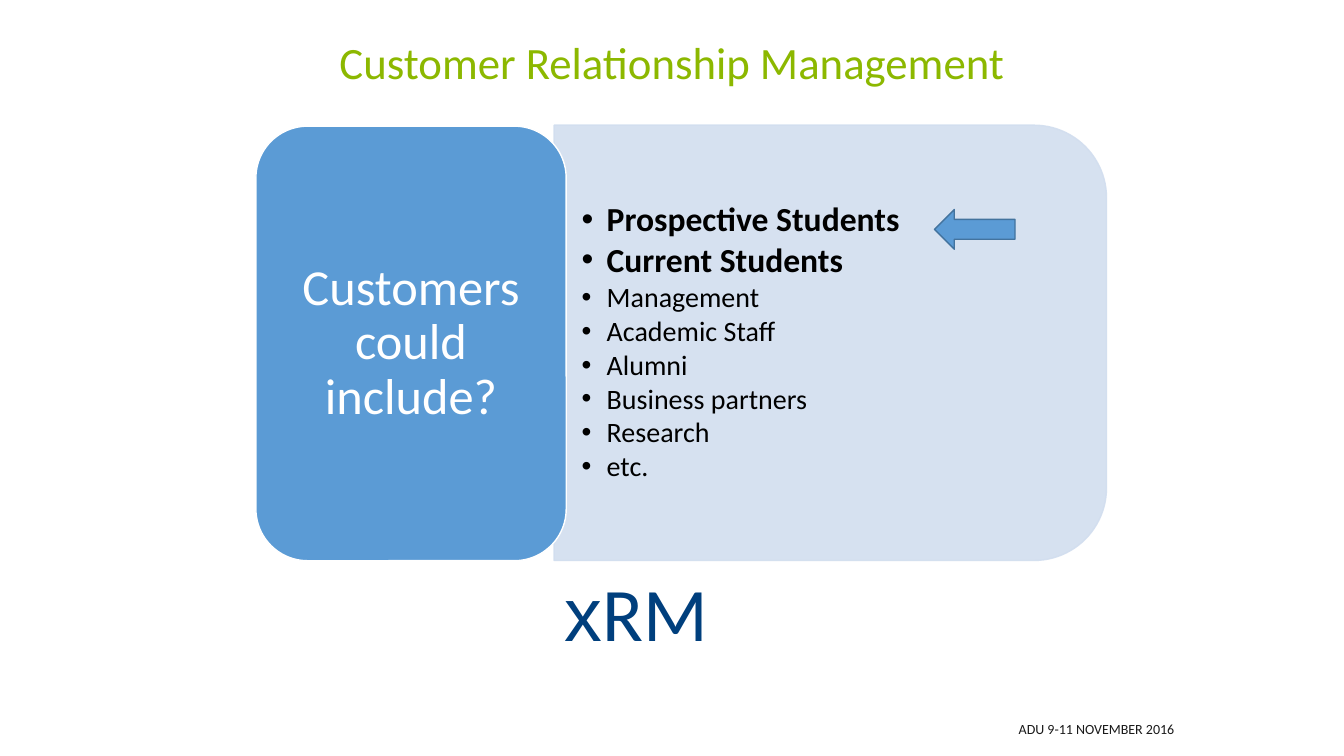
from lxml import etree
from pptx import Presentation
from pptx.dml.color import RGBColor
from pptx.enum.shapes import MSO_SHAPE
from pptx.enum.text import MSO_ANCHOR, PP_ALIGN
from pptx.oxml.ns import qn
from pptx.util import Cm, Pt

LEFT, CENTER, RIGHT = PP_ALIGN.LEFT, PP_ALIGN.CENTER, PP_ALIGN.RIGHT
TOP, MIDDLE = MSO_ANCHOR.TOP, MSO_ANCHOR.MIDDLE
ROUNDED, TOP_ROUNDED = MSO_SHAPE.ROUNDED_RECTANGLE, MSO_SHAPE.ROUND_2_SAME_RECTANGLE
LEFT_ARROW = MSO_SHAPE.LEFT_ARROW
BLUE, PALE_BLUE, WHITE = "5B9BD5", "D2DEEF", "FFFFFF"
KEY_CUSTOMERS = ["Prospective Students", "Current Students"]
OTHER_CUSTOMERS = ["Management", "Academic Staff", "Alumni", "Business partners", "Research", "etc."]


def set_color(color_format, value):
    color_format.rgb = RGBColor.from_string(value)


def set_values(target, values):
    for name, value in values.items():
        setattr(target, name, value)


def add_block(slide, kind, box, fill, line, rotation=0):
    shape = slide.shapes.add_shape(kind, *map(Cm, box))
    shape.shadow.inherit = False
    shape.rotation = rotation
    shape.fill.solid()
    set_color(shape.fill.fore_color, fill)
    set_color(shape.line.color, line)
    shape.line.width = Pt(1)
    return shape


def set_opacity(shape, percent):
    for color in shape.element.spPr.iter(qn("a:srgbClr")):
        etree.SubElement(color, qn("a:alpha"), val=str(percent * 1000))


def add_text_frame(slide, box, anchor=MIDDLE, margins=(0.25, 0.13)):
    frame = slide.shapes.add_textbox(*map(Cm, box)).text_frame
    horizontal, vertical = map(Cm, margins)
    set_values(frame, {
        "word_wrap": True, "vertical_anchor": anchor,
        "margin_left": horizontal, "margin_right": horizontal,
        "margin_top": vertical, "margin_bottom": vertical,
    })
    return frame


def add_run(paragraph, text, size, color, font="Calibri", bold=False):
    run = paragraph.add_run()
    run.text = text
    set_values(run.font, {"name": font, "size": Pt(size), "bold": bold})
    set_color(run.font.color, color)


def add_label(slide, box, text, size, color, alignment=CENTER, **frame_options):
    paragraph = add_text_frame(slide, box, **frame_options).paragraphs[0]
    paragraph.alignment = alignment
    add_run(paragraph, text, size, color)
    return paragraph


def add_bullet(paragraph):
    properties = paragraph._p.get_or_add_pPr()
    indent = Cm(0.63)
    properties.set("marL", str(indent))
    properties.set("indent", str(-indent))
    etree.SubElement(properties, qn("a:buFont"), typeface="Arial")
    etree.SubElement(properties, qn("a:buChar"), char="•")


def add_customer_list(slide, box):
    frame = add_text_frame(slide, box, margins=(0.69, 0.36))
    for index, customer in enumerate(KEY_CUSTOMERS + OTHER_CUSTOMERS):
        is_key = customer in KEY_CUSTOMERS
        size = 24 if is_key else 20
        paragraph = frame.add_paragraph() if index else frame.paragraphs[0]
        set_values(paragraph, {
            "alignment": LEFT, "line_spacing": 0.9, "space_after": Pt(size / 8),
        })
        add_bullet(paragraph)
        add_run(paragraph, customer, size, "000000", bold=is_key)


def add_xrm(slide, box):
    paragraph = add_text_frame(slide, box, anchor=TOP).paragraphs[0]
    paragraph.alignment = CENTER
    for text, font in (("x", "Arial"), ("RM", "Calibri")):
        add_run(paragraph, text, 54, "003F7D", font)


def main():
    presentation = Presentation()
    set_values(presentation, {"slide_width": Cm(33.87), "slide_height": Cm(19.05)})
    slide = presentation.slides.add_slide(presentation.slide_layouts[6])

    panel = add_block(slide, TOP_ROUNDED, (15.44, 1.68, 10.97, 13.92), PALE_BLUE, PALE_BLUE, 90)
    set_opacity(panel, 90)
    add_customer_list(slide, (13.97, 3.68, 13.39, 9.91))
    add_block(slide, ROUNDED, (6.45, 3.18, 7.82, 10.95), BLUE, WHITE)
    question = add_label(slide, (6.83, 3.56, 7.06, 10.19), "Customers could include?",
                         36, WHITE, margins=(0.38, 0.18))
    question.line_spacing = 0.9
    add_xrm(slide, (11.13, 14.12, 9.8, 2.57))
    add_block(slide, LEFT_ARROW, (23.55, 5.28, 2.03, 1), BLUE, "43739E")
    add_label(slide, (5.51, 0.36, 22.86, 2.36), "Customer Relationship Management", 32, "8CB800")
    add_label(slide, (13.46, 17.98, 16.38, 0.76), "ADU 9-11 NOVEMBER 2016", 10, "1A1A1A", RIGHT)

    presentation.save("out.pptx")


if __name__ == "__main__":
    main()
